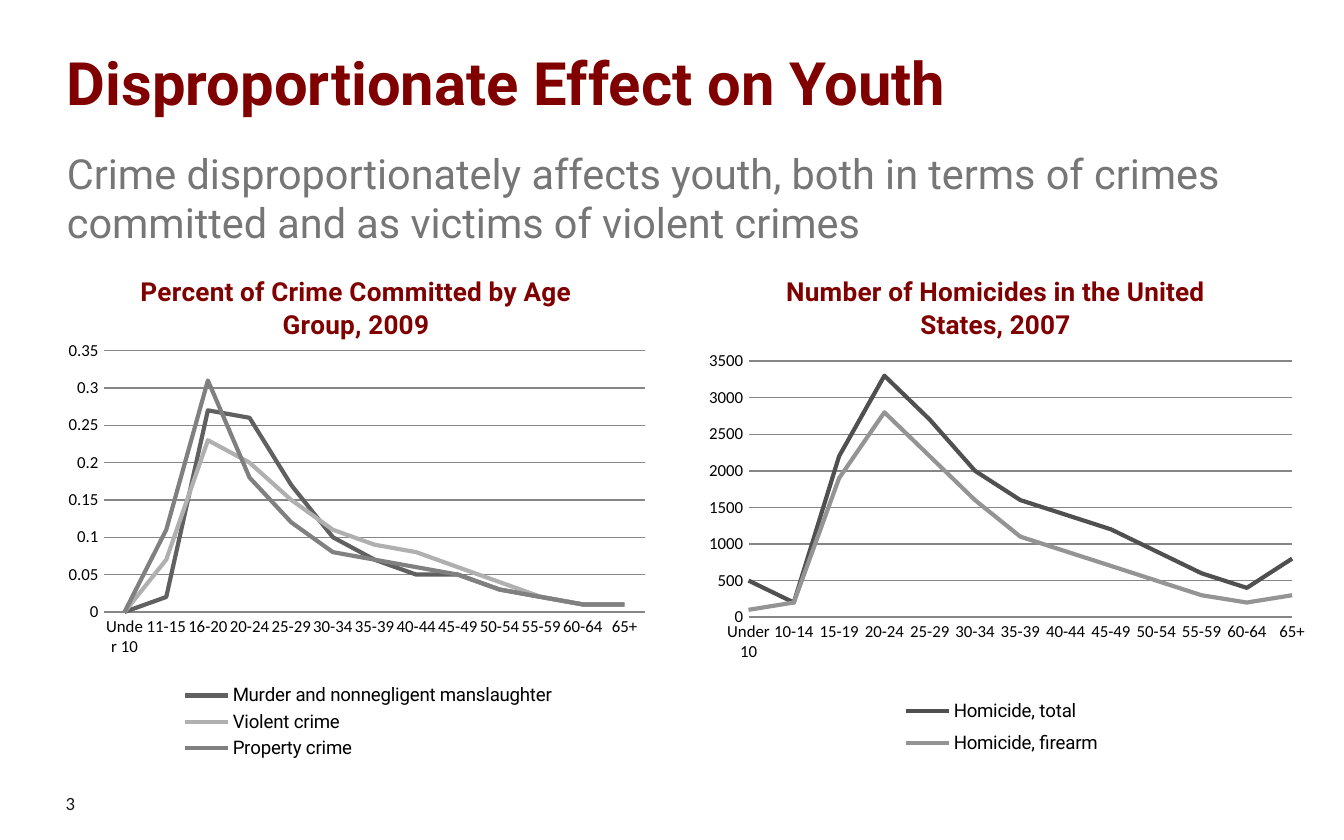
from lxml import etree
from pptx import Presentation
from pptx.chart.data import CategoryChartData
from pptx.dml.color import RGBColor
from pptx.enum import chart as chart_enum, text as text_enum
from pptx.oxml.ns import qn
from pptx.util import Inches, Pt

MAROON, GRAY, BLACK, GRID = "800000", "767676", "000000", "868686"
OLDER_GROUPS = ["20-24", "25-29", "30-34", "35-39", "40-44", "45-49",
                "50-54", "55-59", "60-64", "65+"]


def color(value):
    return RGBColor.from_string(value)


def format_font(font, size, value, name, bold=False):
    font.size = Pt(size)
    font.color.rgb = color(value)
    font.name = name
    font.bold = bold


def add_text(slide, content, *, box, size, value, name="Roboto", bold=False,
             wrap=True, top=0.08):
    shape = slide.shapes.add_textbox(*map(Inches, box))
    frame = shape.text_frame
    frame.word_wrap = wrap
    frame.margin_top = Inches(top)
    frame.vertical_anchor = text_enum.MSO_ANCHOR.TOP
    run = frame.paragraphs[0].add_run()
    run.text = content
    format_font(run.font, size, value, name, bold)


def set_layout(element, box, inner=False):
    for layout in element.findall(qn("c:layout")):
        element.remove(layout)
    layout = etree.Element(qn("c:layout"))
    manual = etree.SubElement(layout, qn("c:manualLayout"))
    settings = [("layoutTarget", "inner")] if inner else []
    settings += [("xMode", "edge"), ("yMode", "edge")]
    settings += zip("xywh", map(str, box))
    for tag, value in settings:
        etree.SubElement(manual, qn("c:" + tag)).set("val", value)
    if inner:
        element.insert(0, layout)
    else:
        element.find(qn("c:legendPos")).addnext(layout)


def set_crossing(axis_element, value):
    for crossing in axis_element.findall(qn("c:crossBetween")):
        axis_element.remove(crossing)
    crossing = etree.Element(qn("c:crossBetween"))
    crossing.set("val", value)
    previous = axis_element.find(qn("c:crosses"))
    if previous is None:
        previous = axis_element.find(qn("c:crossAx"))
    previous.addnext(crossing)


def style_axis(axis):
    axis.major_tick_mark = axis.minor_tick_mark = chart_enum.XL_TICK_MARK.NONE
    format_font(axis.tick_labels.font, 9, BLACK, "Calibri")
    axis.format.line.color.rgb = color(GRID)


def add_line_chart(slide, title, categories, series, *, box, plot, legend,
                   maximum, step, crossing):
    data = CategoryChartData()
    data.categories = categories
    for name, _, values in series:
        data.add_series(name, values)
    chart = slide.shapes.add_chart(chart_enum.XL_CHART_TYPE.LINE,
                                   *map(Inches, box), data).chart
    format_font(chart.font, 10, BLACK, "Calibri")

    chart.has_title = True
    chart.chart_title.include_in_layout = False
    run = chart.chart_title.text_frame.paragraphs[0].add_run()
    run.text = title
    format_font(run.font, 14, MAROON, "Roboto", True)

    chart.has_legend = True
    chart.legend.position = chart_enum.XL_LEGEND_POSITION.BOTTOM
    chart.legend.include_in_layout = False
    format_font(chart.legend.font, 10, BLACK, "Roboto")

    style_axis(chart.category_axis)
    value_axis = chart.value_axis
    style_axis(value_axis)
    value_axis.format.line.fill.background()
    value_axis.minimum_scale, value_axis.maximum_scale = 0, maximum
    value_axis.major_unit = step
    value_axis.tick_labels.number_format = "General"
    value_axis.tick_labels.number_format_is_linked = False
    value_axis.major_gridlines.format.line.color.rgb = color(GRID)

    chart.plots[0].vary_by_categories = False
    for line, (_, value, _) in zip(chart.plots[0].series, series):
        line.smooth = False
        line.marker.style = chart_enum.XL_MARKER_STYLE.NONE
        line.format.line.color.rgb = color(value)
        line.format.line.width = Pt(2.25)

    root = chart.element
    set_crossing(root.find(".//" + qn("c:valAx")), crossing)
    set_layout(root.find(".//" + qn("c:plotArea")), plot, inner=True)
    set_layout(root.find(".//" + qn("c:legend")), legend)


def main():
    presentation = Presentation()
    presentation.slide_width, presentation.slide_height = Inches(10), Inches(6.25)
    slide = presentation.slides.add_slide(presentation.slide_layouts[6])
    add_text(slide, "3", box=(0.39, 5.84, 0.37, 0.27), size=10,
             value="191918", name="Calibri", wrap=False, top=0.05)
    add_text(slide, "Disproportionate Effect on Youth",
             box=(0.4, 0.26, 9, 0.57), size=32, value=MAROON, bold=True)
    add_text(slide, "Crime disproportionately affects youth, both in terms of "
             "crimes committed and as victims of violent crimes",
             box=(0.4, 1.02, 9, 0.76), size=22.2, value=GRAY)

    crimes = [
        ("Murder and nonnegligent manslaughter", "606060",
         [0, 0.02, 0.27, 0.26, 0.17, 0.1, 0.07, 0.05, 0.05, 0.03, 0.02, 0.01, 0.01]),
        ("Violent crime", "B0B0B0",
         [0, 0.07, 0.23, 0.2, 0.15, 0.11, 0.09, 0.08, 0.06, 0.04, 0.02, 0.01, 0.01]),
        ("Property crime", "808080",
         [0, 0.11, 0.31, 0.18, 0.12, 0.08, 0.07, 0.06, 0.05, 0.03, 0.02, 0.01, 0.01]),
    ]
    add_line_chart(slide, "Percent of Crime Committed by Age Group, 2009",
                   ["Under 10", "11-15", "16-20"] + OLDER_GROUPS, crimes,
                   box=(0.36, 1.87, 4.58, 3.89), plot=(0.09, 0.19, 0.88, 0.5),
                   legend=(0.2, 0.82, 0.64, 0.16), maximum=0.35, step=0.05,
                   crossing="between")

    homicides = [
        ("Homicide, total", "505050",
         [500, 200, 2200, 3300, 2700, 2000, 1600, 1400, 1200, 900, 600, 400, 800]),
        ("Homicide, firearm", "949494",
         [100, 200, 1900, 2800, 2200, 1600, 1100, 900, 700, 500, 300, 200, 300]),
    ]
    add_line_chart(slide, "Number of Homicides in the United States, 2007",
                   ["Under 10", "10-14", "15-19"] + OLDER_GROUPS, homicides,
                   box=(5.11, 1.87, 4.6, 3.89), plot=(0.1, 0.21, 0.88, 0.49),
                   legend=(0.33, 0.84, 0.36, 0.14), maximum=3500, step=500,
                   crossing="midCat")
    presentation.save("out.pptx")


if __name__ == "__main__":
    main()
